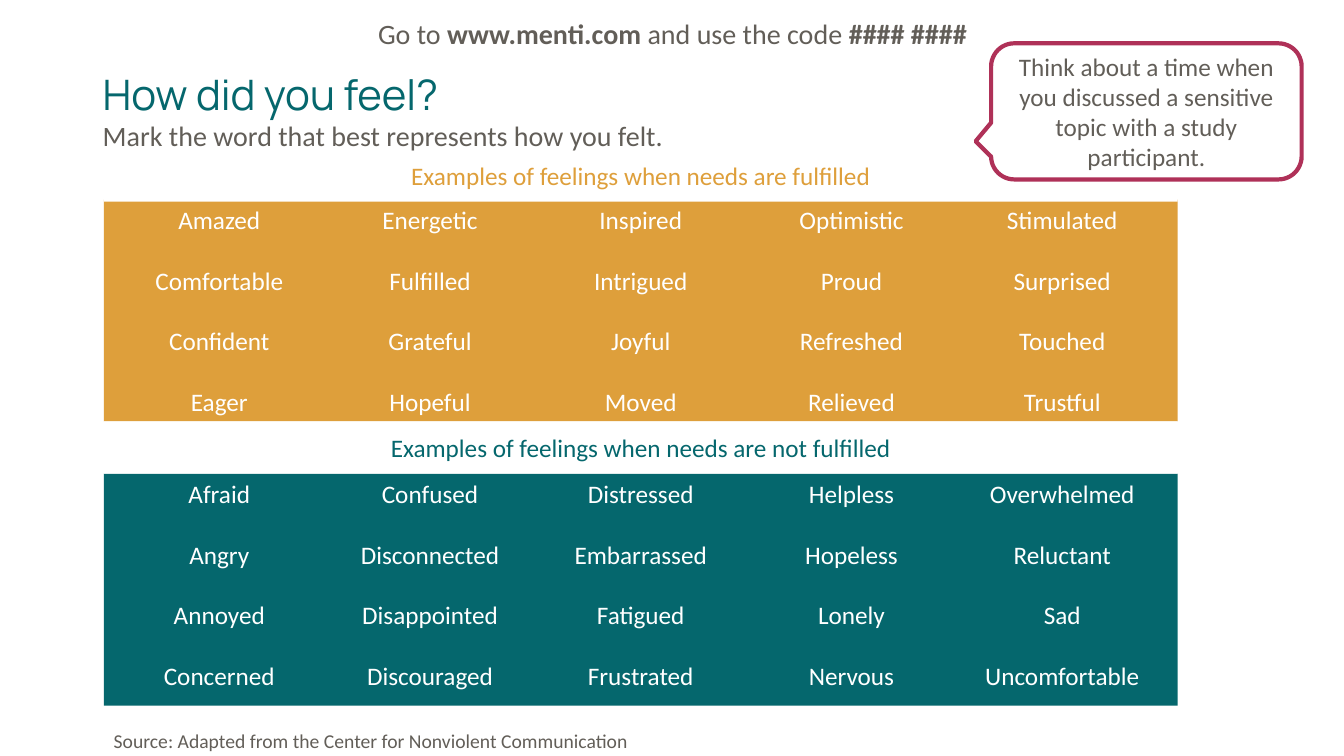
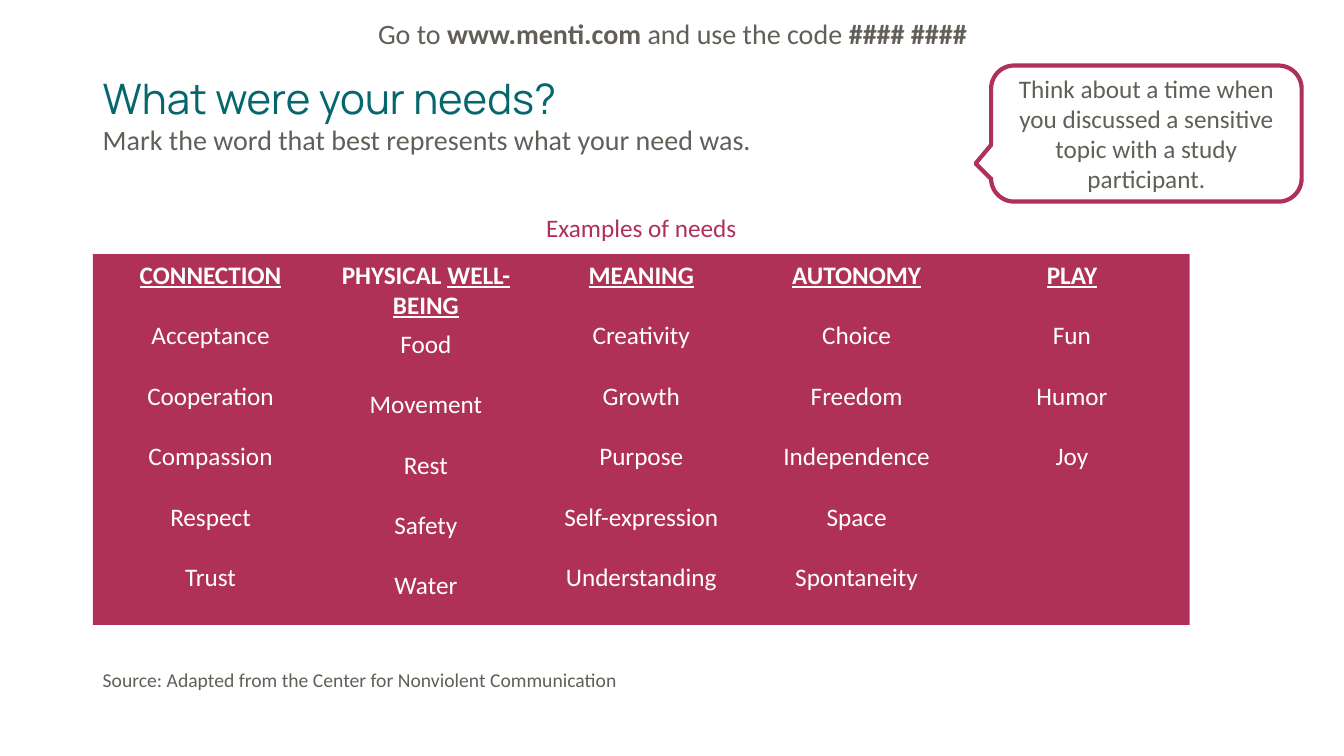
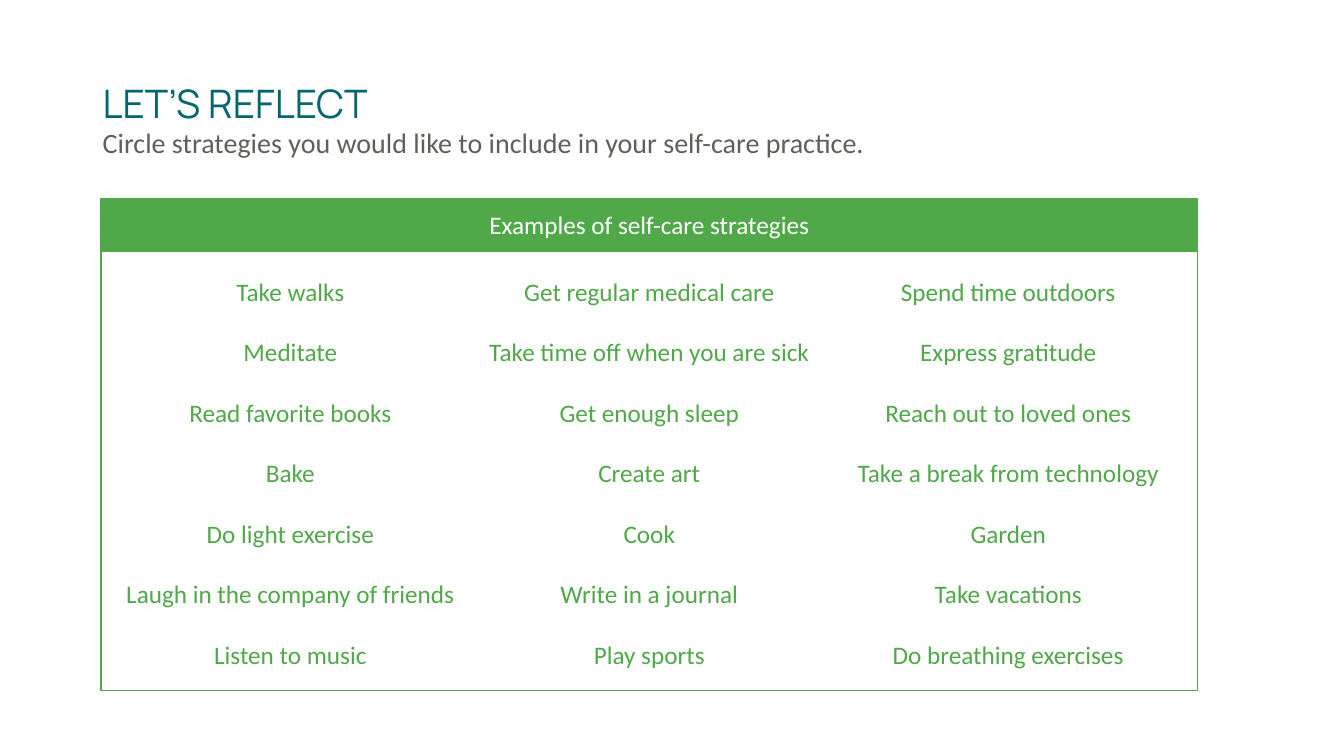
from dataclasses import dataclass
from typing import Optional

from pptx import Presentation
from pptx.dml.color import RGBColor
from pptx.enum.shapes import MSO_SHAPE
from pptx.enum.text import MSO_ANCHOR, PP_ALIGN
from pptx.util import Inches, Pt

# Shared look
TEAL = RGBColor(0x05, 0x67, 0x6D)
GOLD = RGBColor(0xDE, 0x9F, 0x3B)
BERRY = RGBColor(0xAF, 0x31, 0x58)
GREEN = RGBColor(0x50, 0xA8, 0x49)
GREY = RGBColor(0x62, 0x5E, 0x58)
WHITE = RGBColor(0xFF, 0xFF, 0xFF)
TITLE_FONT, BODY_FONT = "Manrope", "Calibri"
LEFT, CENTER = PP_ALIGN.LEFT, PP_ALIGN.CENTER
TOP, MIDDLE = MSO_ANCHOR.TOP, MSO_ANCHOR.MIDDLE
RECTANGLE = MSO_SHAPE.RECTANGLE
CALLOUT = MSO_SHAPE.ROUNDED_RECTANGULAR_CALLOUT

WORD_SIZE = 18
WORD_GAP = Pt(21.6)
WRAPPED_HEADING_GAP = Pt(6)
PANEL_INSET = 0.1
BAND_HEIGHT = 0.52
SOURCE = "Source: Adapted from the Center for Nonviolent Communication"
PROMPT = ("Think about a time when you discussed a sensitive topic "
          "with a study participant.")


@dataclass(frozen=True)
class Box:
    left: float
    top: float
    width: float
    height: float

    def lengths(self) -> tuple:
        return tuple(Inches(v) for v in
                     (self.left, self.top, self.width, self.height))


@dataclass(frozen=True)
class Piece:
    """A stretch of text with its emphasis."""
    text: str
    bold: bool = False
    underline: bool = False


@dataclass(frozen=True)
class WordPanel:
    """A block of words in columns, with a heading band above it."""
    box: Box
    band_top: float
    heading: str
    columns: tuple[tuple[str, ...], ...]
    color: RGBColor
    outlined: bool = False
    has_headings: bool = False
    words_offset: float = 0


@dataclass(frozen=True)
class Activity:
    title: str
    title_box: Box
    title_size: int
    instruction: str
    instruction_top: float
    panels: tuple[WordPanel, ...]
    source_box: Optional[Box] = None
    prompt_top: Optional[float] = None


# Text helpers
def write_pieces(paragraph, pieces: tuple[Piece, ...], size: int,
                 color: RGBColor, align=LEFT, font: str = BODY_FONT) -> None:
    paragraph.alignment = align
    for piece in pieces:
        run = paragraph.add_run()
        run.text = piece.text
        run.font.name, run.font.size = font, Pt(size)
        run.font.color.rgb = color
        run.font.bold, run.font.underline = piece.bold, piece.underline


def add_text(slide, box: Box, pieces: tuple[Piece, ...], size: int,
             align=LEFT, color: RGBColor = GREY, font: str = BODY_FONT,
             anchor=TOP):
    frame = slide.shapes.add_textbox(*box.lengths()).text_frame
    frame.word_wrap = True
    frame.vertical_anchor = anchor
    write_pieces(frame.paragraphs[0], pieces, size, color, align, font)
    return frame


def add_block(slide, kind, box: Box, fill: Optional[RGBColor],
              line: Optional[RGBColor] = None, line_width: float = 1):
    block = slide.shapes.add_shape(kind, *box.lengths())
    block.shadow.inherit = False
    if fill is None:
        block.fill.background()
    else:
        block.fill.solid()
        block.fill.fore_color.rgb = fill
    if line is None:
        block.line.fill.background()
    else:
        block.line.color.rgb = line
        block.line.width = Pt(line_width)
    block.text_frame.word_wrap = True
    block.text_frame.vertical_anchor = MIDDLE
    return block


# Parts of a slide
def heading_pieces(heading: str) -> tuple[Piece, ...]:
    *plain, last = heading.rpartition(" ")
    lead = "".join(plain)
    underlined = Piece(last, bold=True, underline=True)
    return (Piece(lead, bold=True), underlined) if lead else (underlined,)


def add_word_column(slide, box: Box, words: tuple[str, ...],
                    color: RGBColor, has_heading: bool) -> None:
    frame = slide.shapes.add_textbox(*box.lengths()).text_frame
    frame.word_wrap = True
    frame.margin_left = frame.margin_right = 0
    for row, word in enumerate(words):
        paragraph = frame.add_paragraph() if row else frame.paragraphs[0]
        if row:
            after_wrap = has_heading and row == 1 and " " in words[0]
            paragraph.space_before = (WRAPPED_HEADING_GAP if after_wrap
                                      else WORD_GAP)
        is_heading = has_heading and row == 0
        pieces = heading_pieces(word) if is_heading else (Piece(word),)
        write_pieces(paragraph, pieces, WORD_SIZE, color, CENTER)


def add_panel(slide, panel: WordPanel) -> None:
    box, color = panel.box, panel.color
    line = color if panel.outlined else None
    block_fill, word_color = (None, color) if line else (color, WHITE)
    band_fill, band_color = (color, WHITE) if line else (WHITE, color)
    add_block(slide, RECTANGLE, box, block_fill, line)

    band_box = Box(box.left, panel.band_top, box.width, BAND_HEIGHT)
    band = add_block(slide, RECTANGLE, band_box, band_fill, line)
    write_pieces(band.text_frame.paragraphs[0], (Piece(panel.heading),),
                 WORD_SIZE, band_color, CENTER)

    width = (box.width - 2 * PANEL_INSET) / len(panel.columns)
    for index, words in enumerate(panel.columns):
        column = Box(box.left + PANEL_INSET + index * width,
                     box.top + panel.words_offset, width,
                     box.height - panel.words_offset)
        add_word_column(slide, column, words, word_color, panel.has_headings)


def add_poll_prompt(slide, top: float) -> None:
    callout = add_block(slide, CALLOUT, Box(9.83, top, 3.08, 1.35),
                        WHITE, BERRY, 3)
    for index, value in enumerate((-0.55, 0.22, 0.17)):
        callout.adjustments[index] = value
    write_pieces(callout.text_frame.paragraphs[0], (Piece(PROMPT),),
                 18, GREY, CENTER)
    join_line = (Piece("Go to "), Piece("www.menti.com", bold=True),
                 Piece(" and use the code "), Piece("#### ####", bold=True))
    add_text(slide, Box(2.97, 0.11, 7.4, 0.44), join_line, 20, CENTER)


def add_activity(deck, activity: Activity) -> None:
    slide = deck.slides.add_slide(deck.slide_layouts[6])
    for panel in activity.panels:
        add_panel(slide, panel)
    title = add_text(slide, activity.title_box, (Piece(activity.title),),
                     activity.title_size, color=TEAL, font=TITLE_FONT,
                     anchor=MIDDLE)
    title.paragraphs[0].line_spacing = 0.9
    add_text(slide, Box(0.92, activity.instruction_top, 10.51, 0.44),
             (Piece(activity.instruction),), 20)
    if activity.source_box:
        add_text(slide, activity.source_box, (Piece(SOURCE),), 14)
    if activity.prompt_top is not None:
        add_poll_prompt(slide, activity.prompt_top)


# Content
FULFILLED = WordPanel(
    Box(1.03, 1.98, 10.65, 2.2), 1.48,
    "Examples of feelings when needs are fulfilled",
    (("Amazed", "Comfortable", "Confident", "Eager"),
     ("Energetic", "Fulfilled", "Grateful", "Hopeful"),
     ("Inspired", "Intrigued", "Joyful", "Moved"),
     ("Optimistic", "Proud", "Refreshed", "Relieved"),
     ("Stimulated", "Surprised", "Touched", "Trustful")),
    GOLD)

NOT_FULFILLED = WordPanel(
    Box(1.03, 4.7, 10.65, 2.3), 4.18,
    "Examples of feelings when needs are not fulfilled",
    (("Afraid", "Angry", "Annoyed", "Concerned"),
     ("Confused", "Disconnected", "Disappointed", "Discouraged"),
     ("Distressed", "Embarrassed", "Fatigued", "Frustrated"),
     ("Helpless", "Hopeless", "Lonely", "Nervous"),
     ("Overwhelmed", "Reluctant", "Sad", "Uncomfortable")),
    TEAL)

NEEDS = WordPanel(
    Box(0.92, 2.52, 10.88, 3.68), 2.0, "Examples of needs",
    (("CONNECTION", "Acceptance", "Cooperation", "Compassion", "Respect",
      "Trust"),
     ("PHYSICAL WELL-BEING", "Food", "Movement", "Rest", "Safety", "Water"),
     ("MEANING", "Creativity", "Growth", "Purpose", "Self-expression",
      "Understanding"),
     ("AUTONOMY", "Choice", "Freedom", "Independence", "Space",
      "Spontaneity"),
     ("PLAY", "Fun", "Humor", "Joy")),
    BERRY, has_headings=True)

STRATEGIES = WordPanel(
    Box(1, 2.39, 10.88, 4.46), 1.97, "Examples of self-care strategies",
    (("Take walks", "Meditate", "Read favorite books", "Bake",
      "Do light exercise", "Laugh in the company of friends",
      "Listen to music"),
     ("Get regular medical care", "Take time off when you are sick",
      "Get enough sleep", "Create art", "Cook", "Write in a journal",
      "Play sports"),
     ("Spend time outdoors", "Express gratitude", "Reach out to loved ones",
      "Take a break from technology", "Garden", "Take vacations",
      "Do breathing exercises")),
    GREEN, outlined=True, words_offset=0.3)

ACTIVITIES = (
    Activity("How did you feel?", Box(0.92, 0.66, 11.5, 0.6), 30,
             "Mark the word that best represents how you felt.", 1.13,
             (FULFILLED, NOT_FULFILLED),
             Box(1.03, 7.18, 5.76, 0.32), 0.43),
    Activity("What were your needs?", Box(0.92, 0.7, 11.5, 0.6), 30,
             "Mark the word that best represents what your need was.", 1.17,
             (NEEDS,), Box(0.92, 6.58, 5.31, 0.34), 0.65),
    Activity("LET’S REFLECT", Box(0.92, 0.7, 11.5, 0.69), 28,
             "Circle strategies you would like to include in your "
             "self-care practice.", 1.2, (STRATEGIES,)),
)


def main() -> None:
    deck = Presentation()
    deck.slide_width, deck.slide_height = Inches(13.33), Inches(7.5)
    for activity in ACTIVITIES:
        add_activity(deck, activity)
    deck.save("out.pptx")


if __name__ == "__main__":
    main()
